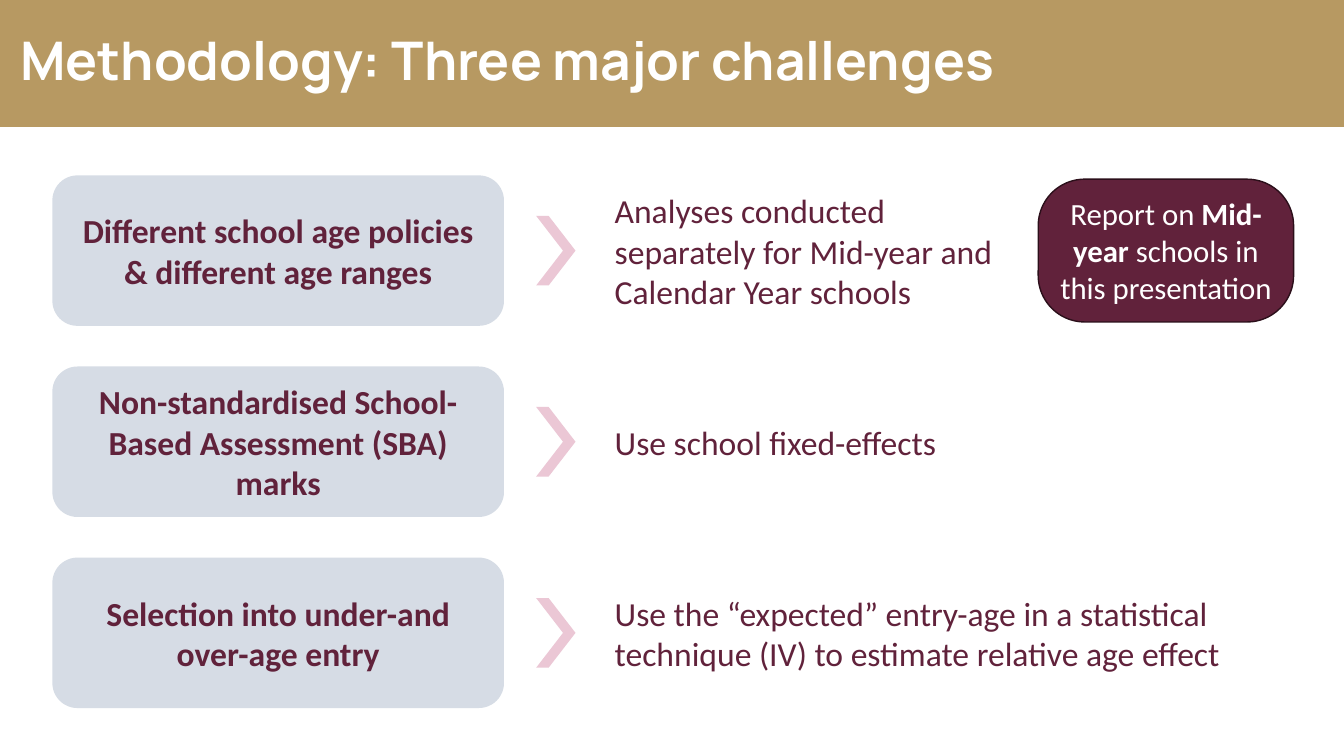
from pptx import Presentation
from pptx.dml.color import RGBColor
from pptx.enum.shapes import MSO_SHAPE
from pptx.enum.text import MSO_ANCHOR, PP_ALIGN
from pptx.util import Pt

RECT, ROUNDED, CHEVRON = (
    MSO_SHAPE.RECTANGLE, MSO_SHAPE.ROUNDED_RECTANGLE, MSO_SHAPE.CHEVRON)
MIDDLE = MSO_ANCHOR.MIDDLE
LEFT, CENTER = PP_ALIGN.LEFT, PP_ALIGN.CENTER

GOLD, GREY, PINK = "B79962", "D6DCE5", "EBC7D5"
PLUM, DARK_PLUM, WHITE = "61223B", "2B0F1A", "FFFFFF"

ROW_TOP, ROW_STEP, ROW_HEIGHT = 125.3, 136.5, 107.5
CHEVRON_HEIGHT = 49.7

# Challenge, response, width of the response
ROWS = [
    ("Different school age policies & different age ranges",
     "Analyses conducted separately for Mid-year and Calendar Year schools",
     309.6),
    ("Non-standardised School-Based Assessment (SBA) marks",
     "Use school fixed-effects", 457.2),
    ("Selection into under-and over-age entry",
     "Use the “expected” entry-age in a statistical technique (IV) "
     "to estimate relative age effect", 457.2),
]


def rgb(color):
    return RGBColor.from_string(color)


def add_shape(s, kind, x, y, w, h, fill, line=None, adj=None):
    sp = s.shapes.add_shape(kind, Pt(x), Pt(y), Pt(w), Pt(h))
    sp.shadow.inherit = False
    sp.fill.solid()
    sp.fill.fore_color.rgb = rgb(fill)
    if line:
        sp.line.color.rgb = rgb(line)
        sp.line.width = Pt(1)
    else:
        sp.line.fill.background()
    if adj is not None:
        sp.adjustments[0] = adj
    return sp


def write(sp, runs, size, color, font="Calibri", align=LEFT):
    """Fill a shape with one paragraph of (text, bold) runs."""
    tf = sp.text_frame
    tf.word_wrap = True
    tf.vertical_anchor = MIDDLE
    p = tf.paragraphs[0]
    p.alignment = align
    p.font.name = font
    p.font.size = Pt(size)
    p.font.color.rgb = rgb(color)
    for text, bold in runs:
        r = p.add_run()
        r.text = text
        r.font.name = font
        r.font.size = Pt(size)
        r.font.color.rgb = rgb(color)
        r.font.bold = bold
    return tf


def add_title(s, text):
    sp = add_shape(s, RECT, 0, -0.7, 960, 91.4, GOLD)
    tf = write(sp, [(text, True)], 38, WHITE, "Manrope")
    tf.margin_left = Pt(14.4)
    tf.paragraphs[0].line_spacing = 0.9


def add_row(s, y, challenge, response, width):
    card = add_shape(s, ROUNDED, 37.4, y, 322.6, ROW_HEIGHT, GREY)
    write(card, [(challenge, True)], 24, PLUM, align=CENTER)
    add_shape(s, CHEVRON, 383, y + (ROW_HEIGHT - CHEVRON_HEIGHT) / 2,
              28.1, CHEVRON_HEIGHT, PINK, adj=0.683)
    box = s.shapes.add_textbox(Pt(432), Pt(y), Pt(width), Pt(ROW_HEIGHT))
    write(box, [(response, False)], 24, PLUM)


def add_callout(s, runs):
    sp = add_shape(s, ROUNDED, 741.6, 128, 182.4, 102, PLUM, DARK_PLUM, 0.326)
    tf = write(sp, runs, 22, WHITE, align=CENTER)
    tf.margin_left = tf.margin_right = Pt(5.8)


def main():
    prs = Presentation()
    prs.slide_width, prs.slide_height = Pt(960), Pt(540)
    s = prs.slides.add_slide(prs.slide_layouts[6])

    # Title band
    add_title(s, "Methodology: Three major challenges")

    # Challenges and responses
    for i, row in enumerate(ROWS):
        add_row(s, ROW_TOP + i * ROW_STEP, *row)

    # Callout beside the first row
    add_callout(s, [("Report on", False), (" Mid-year", True),
                    (" schools in this presentation", False)])

    prs.save("out.pptx")


if __name__ == "__main__":
    main()
